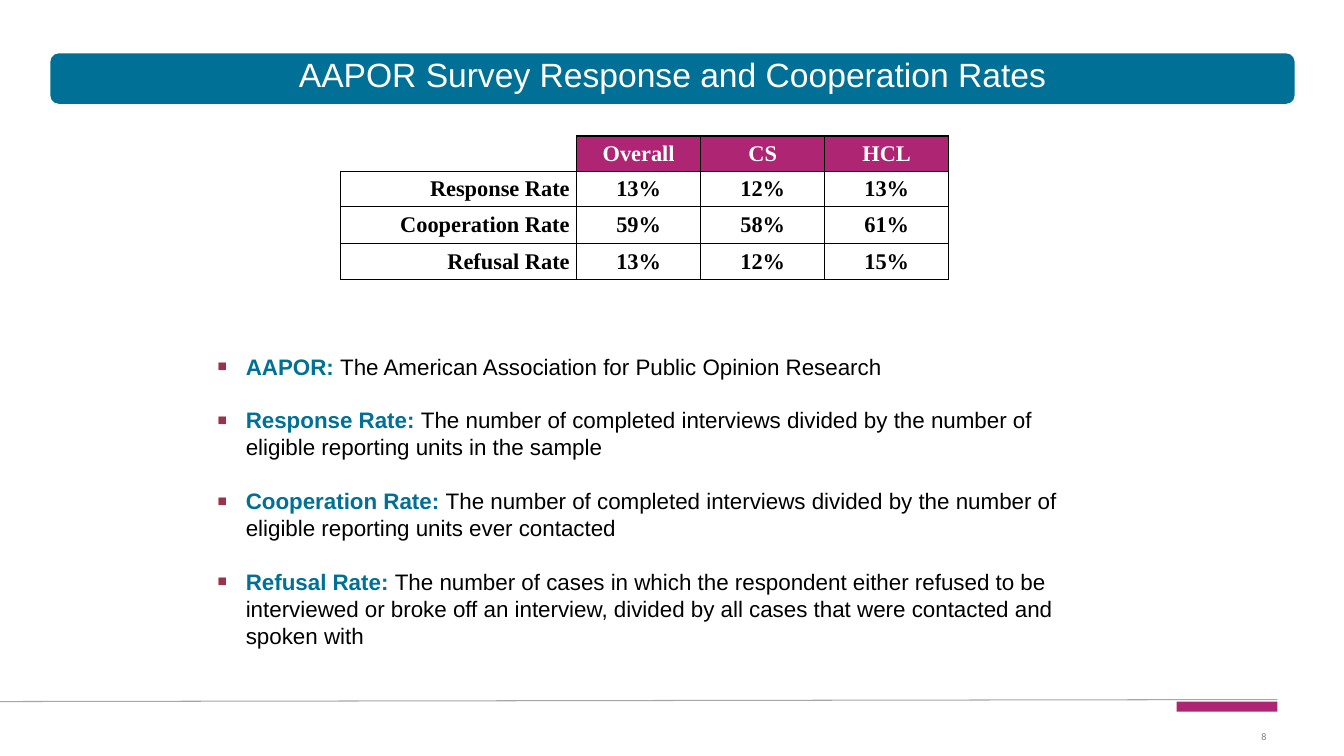
from pptx import Presentation
from pptx import util as u
from pptx.dml.color import RGBColor
from pptx.enum import shapes, text
from pptx.oxml import parse_xml
from pptx.oxml.ns import nsdecls

TEAL = RGBColor(0x00, 0x70, 0x96)
MAGENTA = RGBColor(0xAE, 0x25, 0x73)
BULLET = RGBColor(0x98, 0x32, 0x4D)
GREY = RGBColor(0x7F, 0x7F, 0x7F)
RULE_GREY = RGBColor(0xA6, 0xA6, 0xA6)
BLACK = RGBColor(0, 0, 0)
WHITE = RGBColor(0xFF, 0xFF, 0xFF)

CENTER, RIGHT = text.PP_ALIGN.CENTER, text.PP_ALIGN.RIGHT
TOP, MIDDLE = text.MSO_ANCHOR.TOP, text.MSO_ANCHOR.MIDDLE

RATES = [
    ("", "Overall", "CS", "HCL"),
    ("Response Rate", "13%", "12%", "13%"),
    ("Cooperation Rate", "59%", "58%", "61%"),
    ("Refusal Rate", "13%", "12%", "15%"),
]
DEFINITIONS = [
    ("AAPOR: ", "The American Association for Public Opinion Research"),
    ("Response Rate: ", "The number of completed interviews divided by the number of "
     "eligible reporting units in the sample"),
    ("Cooperation Rate: ", "The number of completed interviews divided by the number of "
     "eligible reporting units ever contacted"),
    ("Refusal Rate: ", "The number of cases in which the respondent either refused to be "
     "interviewed or broke off an interview, divided by all cases that were contacted "
     "and spoken with"),
]


def set_attrs(obj, values):
    for name, value in values.items():
        setattr(obj, name, value)


class SlideBuilder:
    font = "Arial"
    table_font = "Times New Roman"
    body_size = 16

    def __init__(self, prs):
        self.s = prs.slides.add_slide(prs.slide_layouts[6])

    def run(self, p, words, size, color, font=None, bold=False):
        r = p.add_run()
        r.text = words
        set_attrs(r.font, {"name": font or self.font, "size": u.Pt(size), "bold": bold})
        r.font.color.rgb = color

    def block(self, kind, box, color):
        sp = self.s.shapes.add_shape(kind, *map(u.Inches, box))
        sp.shadow.inherit = False
        sp.fill.solid()
        sp.fill.fore_color.rgb = color
        sp.line.fill.background()

    def rule(self, start, end, color, width):
        line = self.s.shapes.add_connector(
            shapes.MSO_CONNECTOR.STRAIGHT, *map(u.Inches, start + end))
        line.line.color.rgb = color
        line.line.width = u.Pt(width)
        line._element.spPr.append(parse_xml(f"<a:effectLst {nsdecls('a')}/>"))

    def textbox(self, box, paragraphs, anchor=TOP, **paragraph_format):
        """Each paragraph is a list of argument tuples for run()."""
        tf = self.s.shapes.add_textbox(*map(u.Inches, box)).text_frame
        set_attrs(tf, {"word_wrap": True, "vertical_anchor": anchor})
        for i, runs in enumerate(paragraphs):
            p = tf.add_paragraph() if i else tf.paragraphs[0]
            set_attrs(p, paragraph_format)
            for args in runs:
                self.run(p, *args)
        return tf

    def bullets(self, box, items, gap):
        """Lists (term, meaning) pairs with square bullets."""
        size = self.body_size
        tf = self.textbox(box, [[(term, size, TEAL, self.font, True), (meaning, size, BLACK)]
                                for term, meaning in items])
        for i, p in enumerate(tf.paragraphs):
            if i:
                p.space_before = u.Pt(gap)
            pPr = p._p.get_or_add_pPr()
            pPr.set("marL", str(u.Inches(0.28)))
            pPr.set("indent", str(-u.Inches(0.28)))
            for xml in (f'<a:buClr {nsdecls("a")}><a:srgbClr val="{BULLET}"/></a:buClr>',
                        f'<a:buSzPct {nsdecls("a")} val="70000"/>',
                        f'<a:buFont {nsdecls("a")} typeface="Arial"/>',
                        f'<a:buChar {nsdecls("a")} char="■"/>'):
                pPr.append(parse_xml(xml))

    def borders(self, cell, hidden=""):
        tcPr = cell._tc.get_or_add_tcPr()
        for i, side in enumerate("LRTB"):
            paint = ("<a:noFill/>" if side in hidden else
                     f'<a:solidFill><a:srgbClr val="{BLACK}"/></a:solidFill>')
            tcPr.insert(i, parse_xml(
                f'<a:ln{side} {nsdecls("a")} w="{u.Pt(1)}">{paint}</a:ln{side}>'))

    def table(self, box, rows, widths, heights):
        """Draws a grid with a coloured header row and an open top left corner."""
        tbl = self.s.shapes.add_table(len(rows), len(widths), *map(u.Inches, box)).table
        set_attrs(tbl, {"first_row": False, "horz_banding": False})
        for col, width in zip(tbl.columns, widths):
            col.width = u.Inches(width)
        for i, (row, height) in enumerate(zip(rows, heights)):
            tbl.rows[i].height = u.Inches(height)
            for j, words in enumerate(row):
                cell = tbl.cell(i, j)
                pad = 0.04 if words else 0
                set_attrs(cell, {
                    "vertical_anchor": MIDDLE,
                    "margin_left": u.Inches(0.07), "margin_right": u.Inches(0.07),
                    "margin_top": u.Inches(pad), "margin_bottom": u.Inches(pad)})
                if words and i == 0:
                    cell.fill.solid()
                    cell.fill.fore_color.rgb = MAGENTA
                else:
                    cell.fill.background()
                self.borders(cell, "" if words else "LT")
                if words:
                    p = cell.text_frame.paragraphs[0]
                    p.alignment = CENTER if j else RIGHT
                    self.run(p, words, self.body_size, BLACK if i else WHITE,
                             self.table_font, True)


def main():
    prs = Presentation()
    set_attrs(prs, {"slide_width": u.Inches(13.33), "slide_height": u.Inches(7.5)})
    b = SlideBuilder(prs)

    b.rule((0, 6.96), (12.67, 6.94), RULE_GREY, 0.75)
    b.textbox((7.64, 7.16, 5.02, 0.3), [[("8", 7.2, GREY, "Calibri")]], MIDDLE, alignment=RIGHT)
    b.block(shapes.MSO_SHAPE.RECTANGLE, (11.67, 6.96, 1, 0.1), MAGENTA)

    b.block(shapes.MSO_SHAPE.ROUNDED_RECTANGLE, (0.5, 0.53, 12.34, 0.5), TEAL)
    b.textbox((2.17, 0.49, 9, 0.58),
              [[("AAPOR Survey Response and Cooperation Rates", 24, WHITE)]],
              alignment=CENTER)
    b.table((3.38, 1.35, 6.03, 1.43), RATES, [2.34] + [1.23] * 3, [0.35, 0.35, 0.37, 0.35])
    b.bullets((2.06, 3.45, 9, 3.18), DEFINITIONS, gap=19.3)

    prs.save("out.pptx")


if __name__ == "__main__":
    main()
